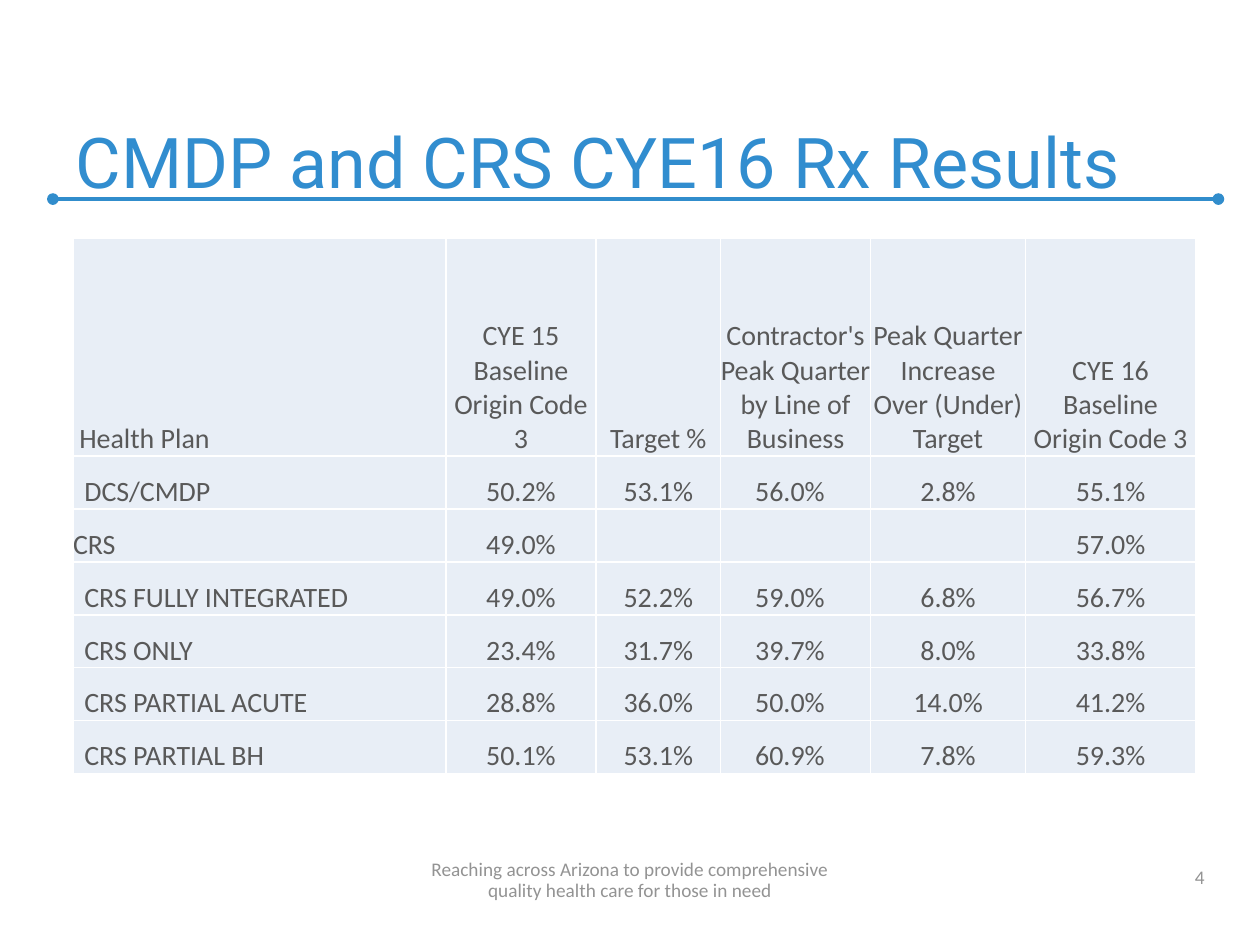
from lxml.etree import SubElement
from pptx import Presentation
from pptx.dml.color import RGBColor
from pptx.enum.shapes import MSO_CONNECTOR
from pptx.enum.text import MSO_ANCHOR, PP_ALIGN
from pptx.oxml.ns import qn
from pptx.util import Inches, Pt

TITLE_BLUE = RGBColor(0x31, 0x8D, 0xCF)
RULE_BLUE = RGBColor(0x31, 0x8D, 0xCC)
FOOTER_GRAY = RGBColor(0x93, 0x93, 0x93)
TABLE_TEXT = RGBColor(0x59, 0x59, 0x59)
CELL_FILL = RGBColor(0xE8, 0xEE, 0xF6)
BORDER_WHITE = "FFFFFF"

COLUMN_WIDTHS = [2.96, 1.19, 0.99, 1.19, 1.23, 1.35]
HEADER_HEIGHT = 1.73
ROW_HEIGHT = 0.42
PEAK_COLUMN = 3
RESULTS = [
    ["Health Plan", "CYE 15 Baseline\nOrigin Code 3", "Target %",
     "Contractor's Peak Quarter\nby Line of Business",
     "Peak Quarter Increase Over (Under) Target", "CYE 16 Baseline\nOrigin Code 3"],
    ["DCS/CMDP", "50.2%", "53.1%", "56.0%", "2.8%", "55.1%"],
    ["CRS", "49.0%", "", "", "", "57.0%"],
    ["CRS FULLY INTEGRATED", "49.0%", "52.2%", "59.0%", "6.8%", "56.7%"],
    ["CRS ONLY", "23.4%", "31.7%", "39.7%", "8.0%", "33.8%"],
    ["CRS PARTIAL ACUTE", "28.8%", "36.0%", "50.0%", "14.0%", "41.2%"],
    ["CRS PARTIAL BH", "50.1%", "53.1%", "60.9%", "7.8%", "59.3%"],
]
PLAN_INDENTS = {"Health Plan": 0.05, "CRS": 0}


class SlideBuilder:
    """Holds the style and the current slide and adds each kind of element."""

    def __init__(self, slide):
        self.slide = slide
        self.title_font = "Roboto"
        self.body_font = "Calibri"

    def style(self, paragraph, font_name, size, color, alignment):
        paragraph.alignment = alignment
        paragraph.font.name = font_name
        paragraph.font.size = Pt(size)
        paragraph.font.color.rgb = color

    def title(self, text, left, top, width, height):
        shape = self.slide.shapes.title
        shape.left, shape.top = Inches(left), Inches(top)
        shape.width, shape.height = Inches(width), Inches(height)
        shape.text_frame.vertical_anchor = MSO_ANCHOR.BOTTOM
        paragraph = shape.text_frame.paragraphs[0]
        paragraph.text = text
        self.style(paragraph, self.title_font, 40, TITLE_BLUE, PP_ALIGN.LEFT)

    def rule(self, left, right, top):
        connector = self.slide.shapes.add_connector(
            MSO_CONNECTOR.STRAIGHT, Inches(left), Inches(top), Inches(right), Inches(top))
        connector.line.color.rgb = RULE_BLUE
        connector.line.width = Pt(2.25)
        line = connector.line._get_or_add_ln()
        for end in ("a:headEnd", "a:tailEnd"):
            SubElement(line, qn(end), type="oval")
        SubElement(connector._element.spPr, qn("a:effectLst"))

    def footer(self, text, left, top, width, height, alignment, line_spacing=None):
        frame = self.slide.shapes.add_textbox(
            Inches(left), Inches(top), Inches(width), Inches(height)).text_frame
        frame.word_wrap = True
        frame.vertical_anchor = MSO_ANCHOR.BOTTOM
        paragraph = frame.paragraphs[0]
        paragraph.text = text
        paragraph.line_spacing = line_spacing
        self.style(paragraph, self.body_font, 11, FOOTER_GRAY, alignment)

    def cell(self, cell, text, alignment, left_margin, right_margin):
        cell.margin_left, cell.margin_right = Inches(left_margin), Inches(right_margin)
        cell.margin_top = cell.margin_bottom = 0
        cell.vertical_anchor = MSO_ANCHOR.BOTTOM
        paragraph = cell.text_frame.paragraphs[0]
        paragraph.text = text
        self.style(paragraph, self.body_font, 16, TABLE_TEXT, alignment)
        properties = cell._tc.get_or_add_tcPr()
        for side in ("a:lnL", "a:lnR", "a:lnT", "a:lnB"):
            border = SubElement(properties, qn(side), w=str(Pt(1)))
            fill = SubElement(border, qn("a:solidFill"))
            SubElement(fill, qn("a:srgbClr"), val=BORDER_WHITE)
        cell.fill.solid()
        cell.fill.fore_color.rgb = CELL_FILL

    def table(self, rows, left, top):
        height = HEADER_HEIGHT + ROW_HEIGHT * (len(rows) - 1)
        table = self.slide.shapes.add_table(
            len(rows), len(COLUMN_WIDTHS), Inches(left), Inches(top),
            Inches(sum(COLUMN_WIDTHS)), Inches(height)).table
        for column, width in zip(table.columns, COLUMN_WIDTHS):
            column.width = Inches(width)
        for row_index, values in enumerate(rows):
            is_header = row_index == 0
            table.rows[row_index].height = Inches(HEADER_HEIGHT if is_header else ROW_HEIGHT)
            for column_index, text in enumerate(values):
                is_plan = column_index == 0
                is_peak = column_index == PEAK_COLUMN and not is_header
                self.cell(
                    table.cell(row_index, column_index), text,
                    PP_ALIGN.LEFT if is_plan else PP_ALIGN.CENTER,
                    PLAN_INDENTS.get(text, 0.09) if is_plan else 0,
                    0.09 if is_peak else 0)
        table.first_row = table.horz_banding = False


def main():
    presentation = Presentation()
    presentation.slide_width, presentation.slide_height = Inches(10), Inches(7.5)
    builder = SlideBuilder(presentation.slides.add_slide(presentation.slide_layouts[5]))
    builder.rule(0.42, 9.67, 1.58)
    builder.title("CMDP and CRS CYE16 Rx Results", 0.5, 0.33, 9.08, 1.33)
    builder.footer("4", 7.33, 6.78, 2.33, 0.32, PP_ALIGN.RIGHT)
    builder.footer(
        "Reaching across Arizona to provide comprehensive\n"
        "quality health care for those in need",
        0, 6.78, 10, 0.42, PP_ALIGN.CENTER, Pt(12))
    builder.table(RESULTS, 0.58, 1.89)
    presentation.save("out.pptx")


if __name__ == "__main__":
    main()
